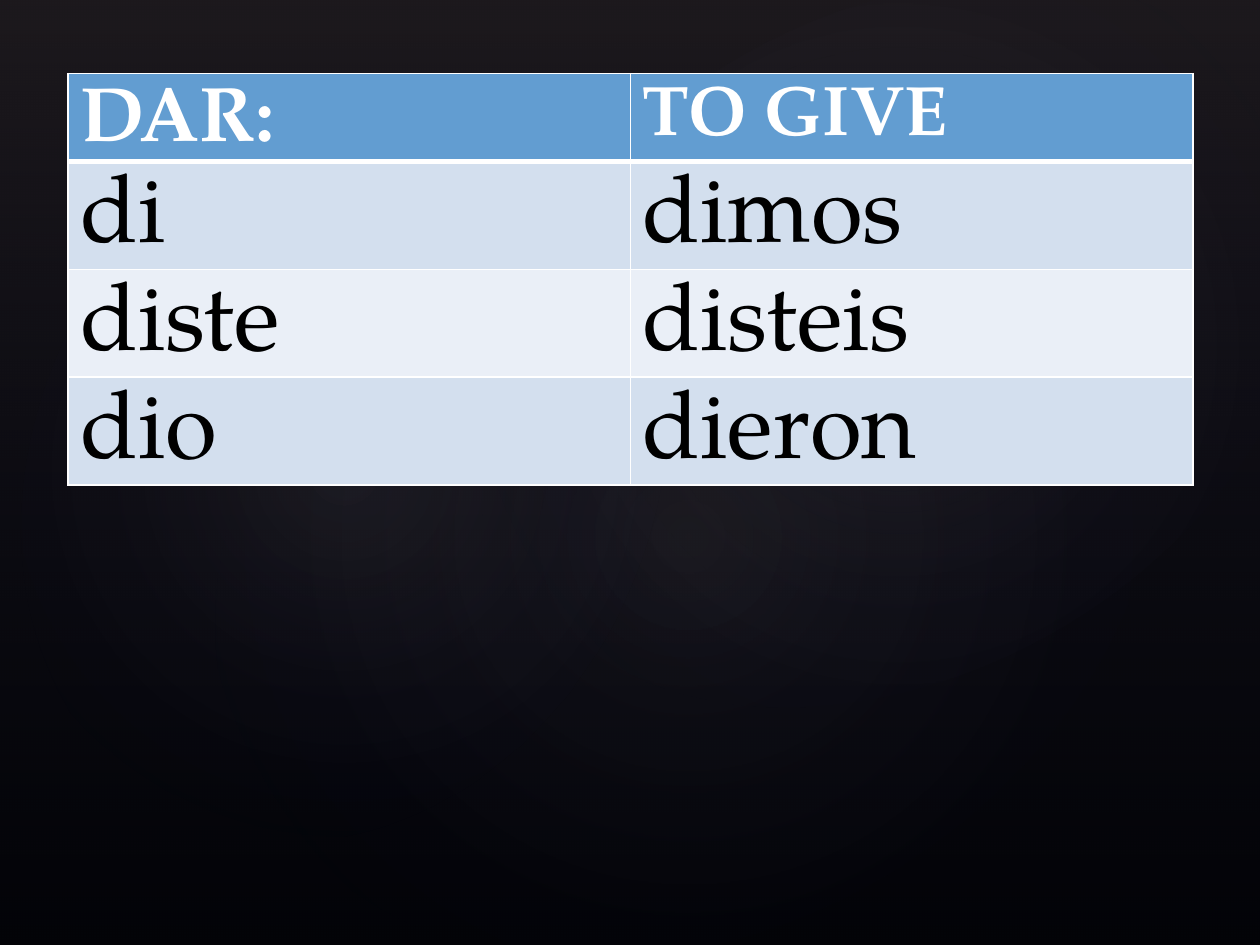
from lxml.etree import SubElement
from pptx import Presentation
from pptx.dml.color import RGBColor
from pptx.enum.shapes import MSO_SHAPE as Shape
from pptx.oxml.ns import qn
from pptx.util import Pt

FONT = "TeX Gyre Pagella"
LINE_FACTOR = 1.14
COLORS = {
    "background": "000000",
    "veil": "504652",
    "navy": "242852",
    "glow": "C4BCC6",
    "header": "629DD1",
    "band_dark": "D3DFEE",
    "band_light": "EAEFF7",
    "white": "FFFFFF",
    "black": "000000",
}
CONJUGATION = [
    ("DAR:", "TO GIVE"),
    ("di", "dimos"),
    ("diste", "disteis"),
    ("dio", "dieron"),
]
GLOWS = [
    (108, 82, 570, 449, 328.7, 7),
    (-21.5, 92, 436, 353, 294.3, 8),
    (258, 9.5, 510.5, 374.5, 328.7, 8),
]


def color(name):
    return RGBColor.from_string(COLORS[name])


def add_color(parent, name, opacity=100):
    element = SubElement(parent, qn("a:srgbClr"), val=COLORS[name])
    SubElement(element, qn("a:alpha"), val=str(opacity * 1000))


def add_gradient_shape(slide, kind, box, stops, rotation=0, radial=False):
    shape = slide.shapes.add_shape(kind, *map(Pt, box))
    shape.shadow.inherit = False
    shape.line.fill.background()
    shape.rotation = rotation
    shape.fill.gradient()
    gradient = shape.fill._xPr.find(qn("a:gradFill"))
    for child in list(gradient):
        gradient.remove(child)
    stop_list = SubElement(gradient, qn("a:gsLst"))
    for position, name, opacity in stops:
        stop = SubElement(stop_list, qn("a:gs"), pos=str(position * 1000))
        add_color(stop, name, opacity)
    if radial:
        focus = SubElement(gradient, qn("a:path"), path="circle")
        sides = dict.fromkeys("ltrb", "50000")
        SubElement(focus, qn("a:fillToRect"), **sides)
    else:
        SubElement(gradient, qn("a:lin"), ang="5400000", scaled="0")


def add_backdrop(slide):
    slide.background.fill.solid()
    slide.background.fill.fore_color.rgb = color("background")
    add_gradient_shape(slide, Shape.RECTANGLE, (0, 0, 720, 540),
                       [(0, "veil", 36), (100, "navy", 10)])
    for *box, rotation, opacity in GLOWS:
        add_gradient_shape(slide, Shape.OVAL, box,
                           [(0, "glow", opacity), (58, "navy", 0)],
                           rotation, radial=True)


def write_text(text_frame, text, *, size, color_name, bold=False):
    paragraph = text_frame.paragraphs[0]
    paragraph.line_spacing = Pt(round(size * LINE_FACTOR, 1))
    run = paragraph.add_run()
    run.text = text
    run.font.name = FONT
    run.font.size = Pt(size)
    run.font.bold = bold
    run.font.color.rgb = color(color_name)


def set_borders(cell, **widths):
    properties = cell._tc.get_or_add_tcPr()
    for side in "LRTB":
        line = SubElement(properties, qn(f"a:ln{side}"),
                          w=str(Pt(widths.get(side, 1))))
        add_color(SubElement(line, qn("a:solidFill")), "white")


def format_cell(cell, fill_name, **border_widths):
    cell.margin_top = cell.margin_bottom = 0
    set_borders(cell, **border_widths)
    cell.fill.solid()
    cell.fill.fore_color.rgb = color(fill_name)


def add_conjugation_table(slide):
    header_height, row_height = 50.25, 61.6
    height = header_height + row_height * (len(CONJUGATION) - 1)
    table = slide.shapes.add_table(len(CONJUGATION), 2, Pt(38.75), Pt(42),
                                   Pt(643), Pt(height)).table
    for row_index, words in enumerate(CONJUGATION):
        is_header = row_index == 0
        table.rows[row_index].height = Pt(header_height if is_header else row_height)
        band = "band_dark" if row_index % 2 else "band_light"
        for column_index, word in enumerate(words):
            cell = table.cell(row_index, column_index)
            if is_header:
                format_cell(cell, "header", B=3)
                write_text(cell.text_frame, word, size=(44, 40)[column_index],
                           color_name="white", bold=True)
            else:
                format_cell(cell, band, T=3 if row_index == 1 else 1)
                write_text(cell.text_frame, word, size=54, color_name="black")


def main():
    presentation = Presentation()
    presentation.slide_width = Pt(720)
    presentation.slide_height = Pt(540)
    slide = presentation.slides.add_slide(presentation.slide_layouts[6])
    add_backdrop(slide)
    add_conjugation_table(slide)
    presentation.save("out.pptx")


if __name__ == "__main__":
    main()
